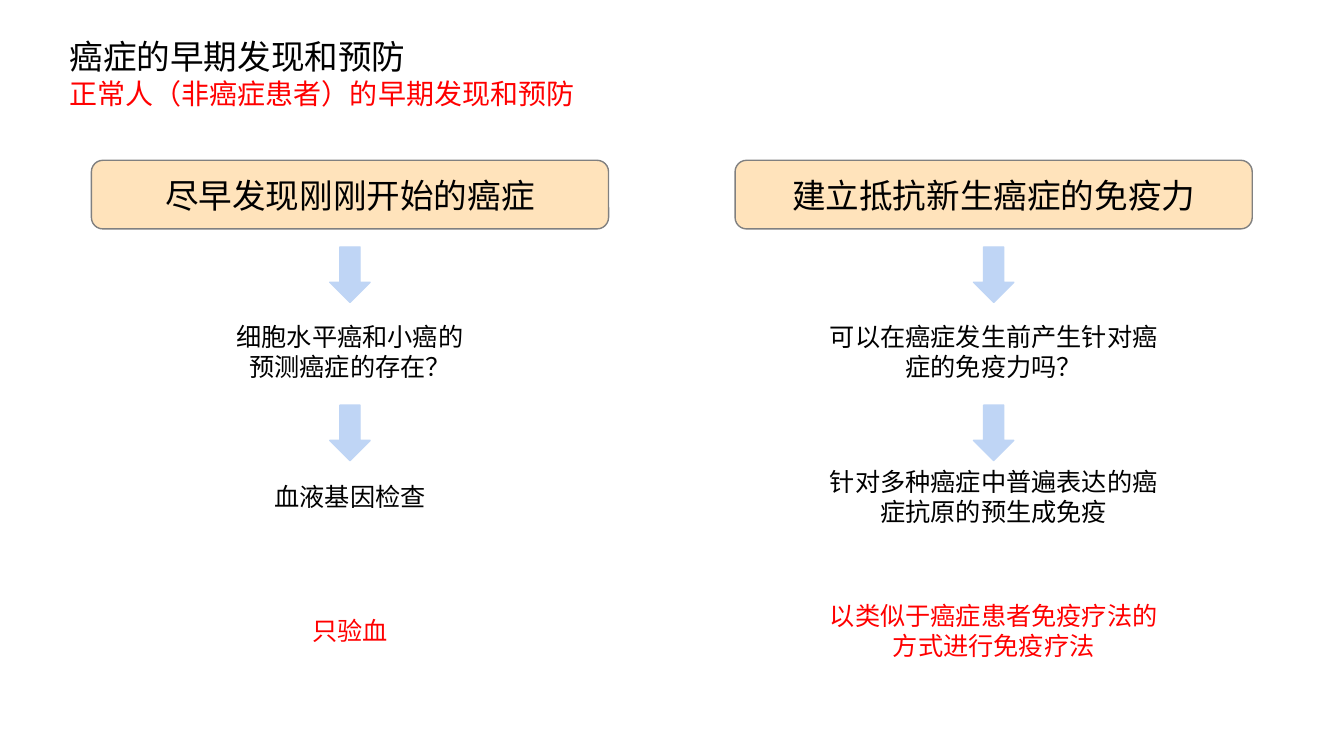
from pptx import Presentation
from pptx.dml.color import RGBColor
from pptx.enum.shapes import MSO_SHAPE
from pptx.enum.text import MSO_ANCHOR, MSO_AUTO_SIZE, PP_ALIGN
from pptx.util import Pt

ROUND, DOWN = MSO_SHAPE.ROUNDED_RECTANGLE, MSO_SHAPE.DOWN_ARROW
TOP, MIDDLE = MSO_ANCHOR.TOP, MSO_ANCHOR.MIDDLE
LEFT, CENTER = PP_ALIGN.LEFT, PP_ALIGN.CENTER
BLACK, RED, CREAM, GRAY, BLUE = "000000", "FF0000", "FFE3BB", "808080", "BFD5F5"


def write(sp, lines, anchor, align):
    tf = sp.text_frame
    tf.text = "\n".join(text for text, size, color in lines)
    frame = {"word_wrap": True, "auto_size": MSO_AUTO_SIZE.NONE, "vertical_anchor": anchor,
             "margin_left": Pt(7.2), "margin_right": Pt(7.2),
             "margin_top": Pt(3.6), "margin_bottom": Pt(3.6)}
    for key, value in frame.items():
        setattr(tf, key, value)
    for p, (text, size, color) in zip(tf.paragraphs, lines):
        p.alignment = align
        for key, value in {"name": "Arial", "size": Pt(size), "bold": False}.items():
            setattr(p.runs[0].font, key, value)
        p.runs[0].font.color.rgb = RGBColor.from_string(color)


def add_shape(kind, center, top, width, height, fill, line):
    sp = s.shapes.add_shape(kind, Pt(center - width / 2), Pt(top), Pt(width), Pt(height))
    sp.shadow.inherit = False
    sp.fill.solid()
    sp.fill.fore_color.rgb = RGBColor.from_string(fill)
    sp.line.color.rgb = RGBColor.from_string(line)
    sp.line.width = Pt(1)
    return sp


prs = Presentation()
prs.slide_width, prs.slide_height = Pt(960), Pt(540)
s = prs.slides.add_slide(prs.slide_layouts[5])

title = s.shapes.title
place = {"left": 42.5, "top": 22.3, "width": 482.4, "height": 60.5}
for key, value in place.items():
    setattr(title, key, Pt(value))
write(title, [("癌症的早期发现和预防", 24, BLACK),
              ("正常人（非癌症患者）的早期发现和预防", 20, RED)], TOP, LEFT)

columns = [
    (250, "尽早发现刚刚开始的癌症",
     [["细胞水平癌和小癌的", "预测癌症的存在？"], ["血液基因检查"], ["只验血"]]),
    (709.8, "建立抵抗新生癌症的免疫力",
     [["可以在癌症发生前产生针对癌症的免疫力吗？"],
      ["针对多种癌症中普遍表达的癌症抗原的预生成免疫"],
      ["以类似于癌症患者免疫疗法的方式进行免疫疗法"]]),
]
rows = [(225.4, BLACK), (329.3, BLACK), (424.8, RED)]

for center, heading, steps in columns:
    sp = add_shape(ROUND, center, 114.5, 369.4, 49, CREAM, GRAY)
    write(sp, [(heading, 24, BLACK)], MIDDLE, CENTER)
    for top in (176.4, 289.4):
        add_shape(DOWN, center, top, 28.8, 39.6, BLUE, BLUE)
    for (top, color), step in zip(rows, steps):
        sp = s.shapes.add_textbox(Pt(center - 132.5), Pt(top), Pt(265), Pt(51))
        write(sp, [(text, 18, color) for text in step], MIDDLE, CENTER)

prs.save("out.pptx")
